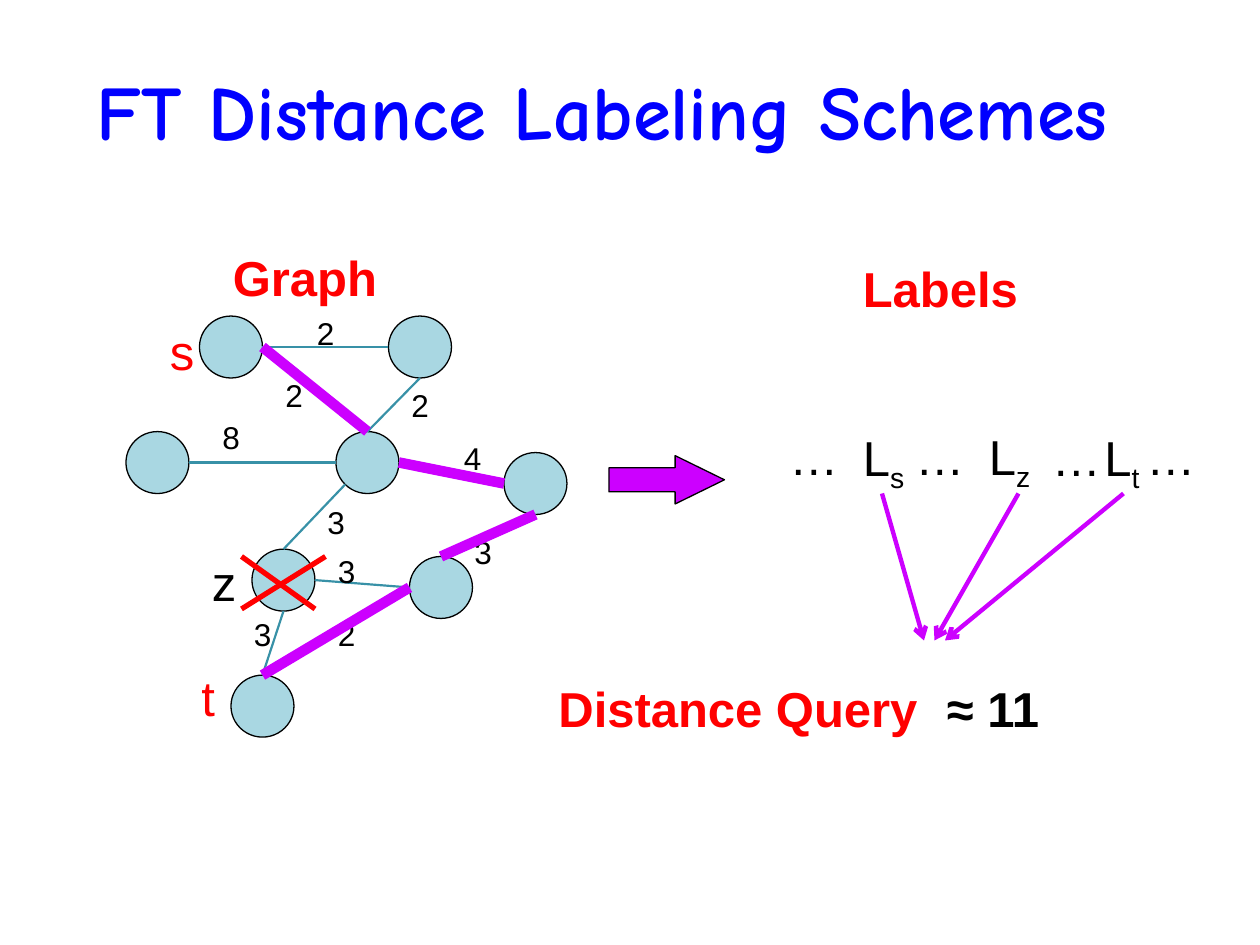
from math import cos, pi, sin

from lxml import etree
from pptx import Presentation
from pptx.dml.color import RGBColor
from pptx.enum.shapes import MSO_CONNECTOR, MSO_SHAPE
from pptx.enum.text import MSO_ANCHOR
from pptx.oxml.ns import qn
from pptx.util import Inches, Pt

LINE = MSO_CONNECTOR.STRAIGHT
OVAL, ARROW = MSO_SHAPE.OVAL, MSO_SHAPE.RIGHT_ARROW
MIDDLE = MSO_ANCHOR.MIDDLE

BLACK = RGBColor(0, 0, 0)
RED = RGBColor(0xFF, 0, 0)
BLUE = RGBColor(0, 0, 0xFF)
PURPLE = RGBColor(0xCC, 0, 0xFF)
TEAL = RGBColor(0x38, 0x91, 0xA7)
PALE = RGBColor(0xA9, 0xD7, 0xE2)

COLS, ROWS = 120, 90        # grid cells across and down the slide
NODE_W, NODE_H = 6, 5.9     # node size in grid cells

# Left and top of each node, in grid cells
NODES = {
    "a": (12, 41.1), "c": (24, 41.1), "b": (37, 30.1), "s": (19, 30.1),
    "u": (48, 43.1), "v": (39, 53), "z": (32 - 8, 52.3), "t": (22, 64.3),
}
NODES["c"], NODES["z"] = (32, 41.1), (24, 52.3)

# Angles on a node, clockwise in degrees
RIGHT, BOTTOM, CORNER, LEFT, TOP = 0, 90, 135, 180, 270

PATH = [
    ("s", RIGHT, "c", TOP), ("c", RIGHT, "u", LEFT),
    ("u", BOTTOM, "v", TOP), ("v", LEFT, "t", TOP),
]
EDGES = PATH + [
    ("t", TOP, "z", BOTTOM), ("z", RIGHT, "v", LEFT),
    ("c", CORNER, "z", TOP), ("c", LEFT, "a", RIGHT),
    ("c", TOP, "b", BOTTOM), ("b", LEFT, "s", RIGHT),
]
WEIGHTS = [
    ("2", 29, 29.3), ("2", 26, 35.2), ("2", 38, 36.2), ("3", 23, 58),
    ("3", 30, 47.3), ("4", 43, 41.2), ("3", 44, 50.2), ("8", 20, 39.2),
    ("2", 31, 58), ("3", 31, 52),
]
NAMES = [("s", 15, 30, RED), ("z", 19, 52, BLACK), ("t", 18, 63, RED)]
HEADS = [("Graph", 21, 23, 20, RED), ("Labels", 81, 24, 20, RED),
         ("Distance Query", 52, 64, 40, RED), ("≈ 11", 89, 64, 15, BLACK)]
LABELS = [("…", "", 74, 40), ("L", "s", 81, 40.1), ("…", "", 86, 40),
          ("L", "z", 93, 40), ("…", "", 99, 40.1), ("L", "t", 104, 40.1),
          ("…", "", 108, 40)]
QUERY = [((84, 47), (88, 61)), ((107, 47), (90, 61)), ((97, 47), (89, 61))]


class Board:
    """Style and current slide; all lengths are grid cells."""

    font = "Arial"

    def __init__(self, deck):
        self.slide = deck.slides.add_slide(deck.slide_layouts[6])
        self.shapes = self.slide.shapes
        self.cw = deck.slide_width / COLS
        self.rh = deck.slide_height / ROWS

    def scale(self, x, y):
        return round(x * self.cw), round(y * self.rh)

    def text(self, words, x, y, w, h=6.8, size=28, color=BLACK,
             bold=False, sub="", font=None):
        box = self.shapes.add_textbox(*self.scale(x, y), *self.scale(w, h))
        frame = box.text_frame
        frame.word_wrap = True
        para = frame.paragraphs[0]
        para.font.name = font or self.font
        para.font.size = Pt(size)
        para.font.bold = bold
        para.font.color.rgb = color
        para.add_run().text = words
        if sub:
            run = para.add_run()
            run.text = sub
            run._r.get_or_add_rPr().set("baseline", "-25000")
        return frame

    def shape(self, kind, x, y, w, h, fill):
        item = self.shapes.add_shape(kind, *self.scale(x, y),
                                     *self.scale(w, h))
        item.shadow.inherit = False
        item.fill.solid()
        item.fill.fore_color.rgb = fill
        item.line.color.rgb = BLACK
        item.line.width = Pt(0.75)
        return item

    def line(self, start, end, color, width, head=False):
        item = self.shapes.add_connector(LINE, *self.scale(*start),
                                         *self.scale(*end))
        item.line.color.rgb = color
        item.line.width = Pt(width)
        if head:
            etree.SubElement(item.line._get_or_add_ln(), qn("a:tailEnd"),
                             type="arrow")
        etree.SubElement(item._element.spPr, qn("a:effectLst"))

    def edge(self, one, out, two, into, color, width):
        self.line(site(one, out), site(two, into), color, width)


def site(name, angle):
    """Point on a node's rim."""
    x, y = NODES[name]
    turn = angle * pi / 180
    return (x + NODE_W / 2 * (1 + cos(turn)),
            y + NODE_H / 2 * (1 + sin(turn)))


def main():
    deck = Presentation()
    deck.slide_width, deck.slide_height = Inches(10), Inches(7.5)
    board = Board(deck)

    # Title
    title = board.text("FT Distance Labeling Schemes", 8, 2, 118, 17,
                       size=44, color=BLUE, bold=True, font="Comic Neue")
    title.vertical_anchor = MIDDLE

    # Graph: nodes, edges, weights
    for x, y in NODES.values():
        board.shape(OVAL, x, y, NODE_W, NODE_H, PALE)
    for edge in EDGES:
        board.edge(*edge, TEAL, 1.25)
    for words, x, y in WEIGHTS:
        board.text(words, x, y, 5.9, 4.8, size=18)

    # Failed node and shortest path
    board.line((31, 53), (23, 58), RED, 3)
    board.line((23, 53), (30, 58), RED, 3)
    for edge in PATH:
        board.edge(*edge, PURPLE, 6)
    for words, x, y, color in NAMES:
        board.text(words, x, y, 5.9, color=color)

    # Headings
    for words, x, y, w, color in HEADS:
        board.text(words, x, y, w, color=color, bold=True)

    # Labels and the query they feed
    arrow = board.shape(ARROW, 58, 43.4, 11, 4.6, PURPLE)
    arrow.adjustments[1] = 1.02
    for words, sub, x, y in LABELS:
        board.text(words, x, y, 8, sub=sub)
    for start, end in QUERY:
        board.line(start, end, PURPLE, 2.5, head=True)

    deck.save("out.pptx")


if __name__ == "__main__":
    main()
